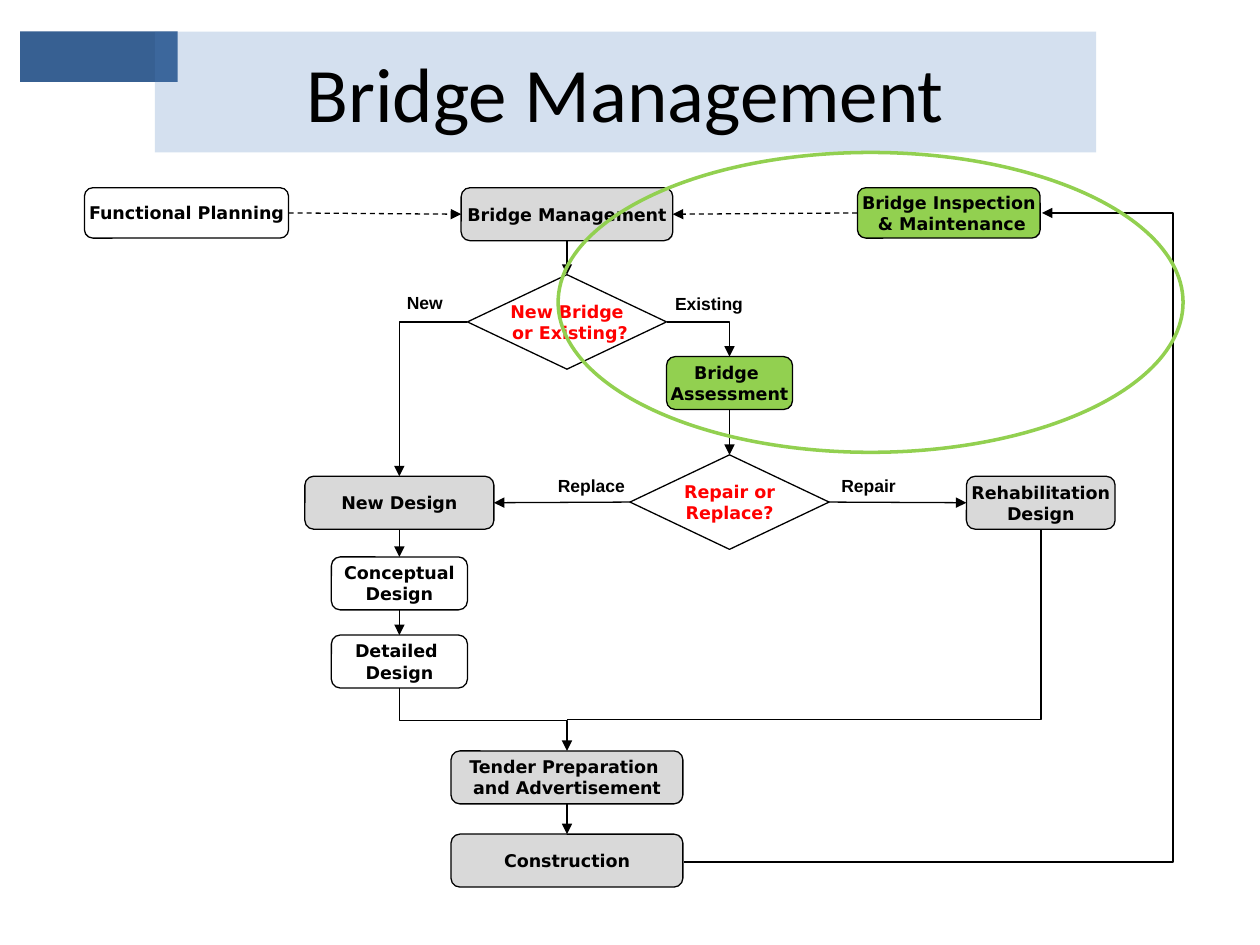
import pptx
import pptx.dml.color
import pptx.enum.dml
import pptx.enum.shapes
import pptx.enum.text
import pptx.oxml
import pptx.oxml.ns
import pptx.util
from pptx.util import Inches

COLORS = {
    "black": "000000", "white": "FFFFFF", "grey": "D9D9D9", "green": "92D050",
    "red": "FF0000", "navy": "376092", "blue": "4F81BD",
}
SHAPES = pptx.enum.shapes.MSO_SHAPE
CONNECTORS = pptx.enum.shapes.MSO_CONNECTOR
ALIGN = pptx.enum.text.PP_ALIGN
ANCHOR = pptx.enum.text.MSO_ANCHOR
TOP, LEFT, BOTTOM, RIGHT = range(4)
qn = pptx.oxml.ns.qn


def rgb(name):
    return pptx.dml.color.RGBColor.from_string(COLORS[name])


def write_text(shape, text, size=10, font="DejaVu Sans", color="black", bold=True,
               align=ALIGN.CENTER, anchor=ANCHOR.MIDDLE, wrap=False):
    frame = shape.text_frame
    frame.word_wrap = wrap
    frame.vertical_anchor = anchor
    frame.text = text
    for para in frame.paragraphs:
        para.alignment = align
        for span in para.runs:
            span.font.size = pptx.util.Pt(size)
            span.font.name = font
            span.font.bold = bold
            span.font.color.rgb = rgb(color)


deck = pptx.Presentation()
deck.slide_width, deck.slide_height = Inches(10), Inches(7.5)
page = deck.slides.add_slide(deck.slide_layouts[5])

# Corner block, with the translucent title band in front of it
corner = page.shapes.add_shape(SHAPES.RECTANGLE, Inches(0.16), Inches(0.25),
                               Inches(1.25), Inches(0.4))
corner.shadow.inherit = False
corner.fill.solid()
corner.fill.fore_color.rgb = rgb("navy")
corner.line.fill.background()

title = page.shapes.title
title.left, title.top = Inches(1.23), Inches(0.25)
title.width, title.height = Inches(7.47), Inches(0.96)
title.fill.solid()
title.fill.fore_color.rgb = rgb("blue")
alpha = pptx.oxml.parse_xml('<a:alpha %s val="24000"/>' % pptx.oxml.ns.nsdecls("a"))
title.element.spPr.find(".//" + qn("a:srgbClr")).append(alpha)
write_text(title, "Bridge Management", size=44, font="Calibri", bold=False, wrap=True)
corner.element.addnext(title.element)

# Process steps: centre x, top, width, height, fill, text
steps = {
    "planning": (1.48, 1.49, 1.62, 0.4, "white", "Functional Planning"),
    "management": (4.5, 1.49, 1.68, 0.42, "grey", "Bridge Management"),
    "inspection": (7.53, 1.49, 1.45, 0.4, "green", "Bridge Inspection\n & Maintenance"),
    "assessment": (5.79, 2.83, 1, 0.42, "green", "Bridge \nAssessment"),
    "new design": (3.17, 3.78, 1.5, 0.42, "grey", "New Design"),
    "rehabilitation": (8.26, 3.78, 1.18, 0.42, "grey", "Rehabilitation\nDesign"),
    "conceptual": (3.17, 4.42, 1.08, 0.42, "white", "Conceptual\nDesign"),
    "detailed": (3.17, 5.04, 1.08, 0.42, "white", "Detailed \nDesign"),
    "tender": (4.5, 5.96, 1.84, 0.42, "grey", "Tender Preparation \nand Advertisement"),
    "construction": (4.5, 6.62, 1.84, 0.42, "grey", "Construction"),
    "new or existing": (4.5, 2.18, 1.58, 0.75, "white", "New Bridge\n or Existing?"),
    "repair or replace": (5.79, 3.61, 1.58, 0.75, "white", "Repair or\nReplace?"),
}
decisions = ("new or existing", "repair or replace")
nodes = {}
for name, (center, top, width, height, fill, text) in steps.items():
    is_decision = name in decisions
    kind = SHAPES.FLOWCHART_DECISION if is_decision else SHAPES.ROUNDED_RECTANGLE
    node = page.shapes.add_shape(kind, Inches(center - width / 2), Inches(top),
                                 Inches(width), Inches(height))
    node.shadow.inherit = False
    node.fill.solid()
    node.fill.fore_color.rgb = rgb(fill)
    node.line.color.rgb = rgb("black")
    node.line.width = pptx.util.Pt(0.75)
    write_text(node, text, color="red" if is_decision else "black")
    nodes[name] = node


def style_line(shape, width=0.75, arrow=True, dashed=False):
    shape.line.color.rgb = rgb("black")
    shape.line.width = pptx.util.Pt(width)
    if dashed:
        shape.line.dash_style = pptx.enum.dml.MSO_LINE.DASH
    properties = shape.element.spPr
    if arrow:
        line = properties.find(qn("a:ln"))
        line.append(line.makeelement(qn("a:tailEnd"), {"type": "triangle"}))
    if properties.find(qn("a:effectLst")) is None:
        properties.append(properties.makeelement(qn("a:effectLst"), {}))


# Connectors: from, side, to, side
links = [
    ("planning", RIGHT, "management", LEFT),
    ("inspection", LEFT, "management", RIGHT),
    ("management", BOTTOM, "new or existing", TOP),
    ("new or existing", LEFT, "new design", TOP),
    ("new or existing", RIGHT, "assessment", TOP),
    ("assessment", BOTTOM, "repair or replace", TOP),
    ("repair or replace", LEFT, "new design", RIGHT),
    ("repair or replace", RIGHT, "rehabilitation", LEFT),
    ("new design", BOTTOM, "conceptual", TOP),
    ("conceptual", BOTTOM, "detailed", TOP),
    ("tender", BOTTOM, "construction", TOP),
]
for source, source_side, target, target_side in links:
    bent = source_side in (LEFT, RIGHT) and target_side == TOP
    kind = CONNECTORS.ELBOW if bent else CONNECTORS.STRAIGHT
    connector = page.shapes.add_connector(kind, 0, 0, 0, 0)
    connector.begin_connect(nodes[source], source_side)
    connector.end_connect(nodes[target], target_side)
    if bent:  # a single corner: across, then down
        connector.element.spPr.find(qn("a:prstGeom")).set("prst", "bentConnector2")
    style_line(connector, dashed=source in ("planning", "inspection"))

# Routed lines into tender preparation and back to inspection
routes = [
    ([(4.5, 5.71), (8.26, 5.71), (8.26, 4.2)], False),
    ([(3.17, 5.46), (3.17, 5.72), (4.5, 5.72), (4.5, 5.96)], True),
    ([(5.43, 6.84), (9.31, 6.84), (9.31, 1.69), (8.27, 1.69)], True),
]
for points, arrow in routes:
    points = [(Inches(x), Inches(y)) for x, y in points]
    builder = page.shapes.build_freeform(*points[0])
    builder.add_line_segments(points[1:], close=False)
    route = builder.convert_to_shape()
    route.fill.background()
    style_line(route, width=1, arrow=arrow)

# Branch labels
labels = [
    ("New", 3.13, 2.27, 0.49),
    ("Existing", 5.26, 2.28, 0.74),
    ("Replace", 4.33, 3.72, 0.74),
    ("Repair", 6.58, 3.72, 0.64),
]
for text, left, top, width in labels:
    box = page.shapes.add_textbox(Inches(left), Inches(top), Inches(width), Inches(0.27))
    write_text(box, text, font="Arial", align=ALIGN.LEFT, anchor=ANCHOR.TOP)
    box.text_frame.auto_size = pptx.enum.text.MSO_AUTO_SIZE.SHAPE_TO_FIT_TEXT

# Highlight around inspection and assessment
highlight = page.shapes.add_shape(SHAPES.OVAL, Inches(4.43), Inches(1.21),
                                  Inches(4.96), Inches(2.38))
highlight.shadow.inherit = False
highlight.fill.background()
highlight.line.color.rgb = rgb("green")
highlight.line.width = pptx.util.Pt(2)

deck.save("out.pptx")
